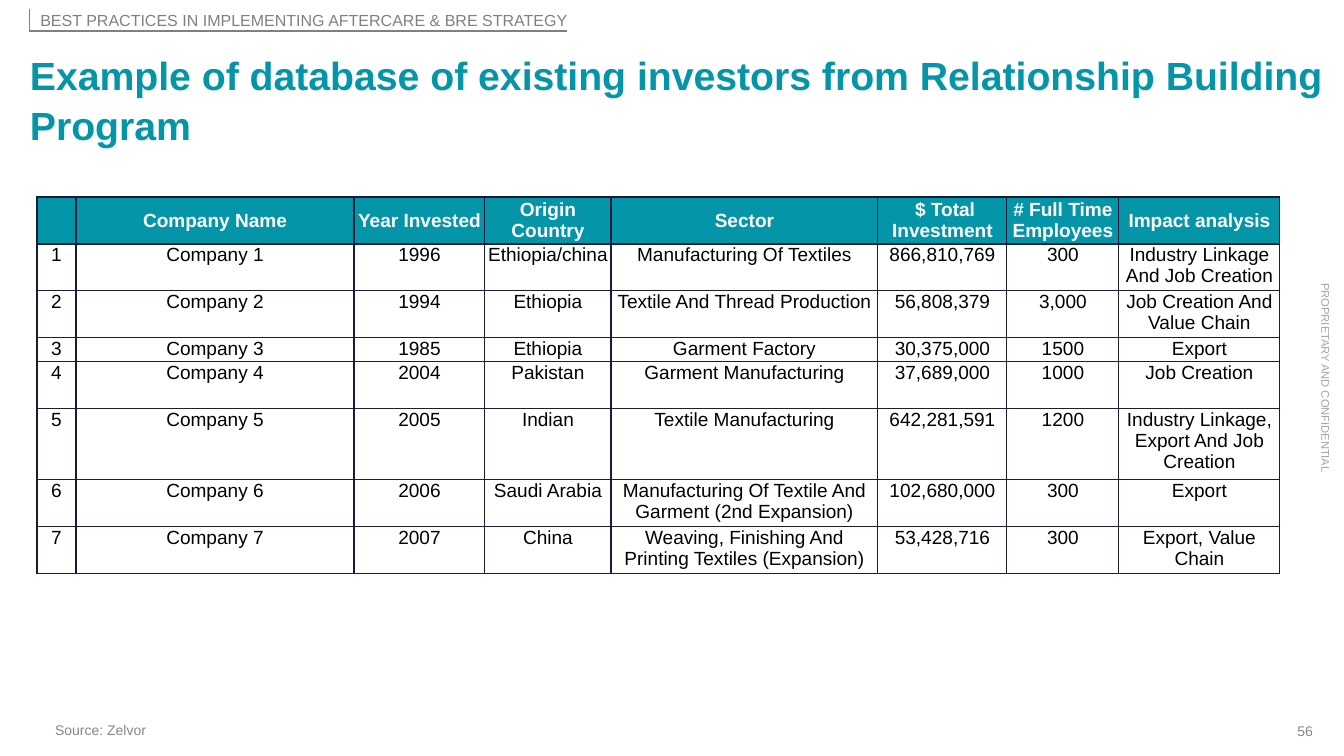
import pptx
import pptx.util
import pptx.dml.color
import pptx.enum.shapes
import pptx.enum.text
import pptx.oxml.ns
from lxml import etree

# Content
TAG = "BEST PRACTICES IN IMPLEMENTING AFTERCARE & BRE STRATEGY"
TITLE = "Example of database of existing investors from Relationship Building Program"
SOURCE = "Source: Zelvor"
NOTICE = "PROPRIETARY AND CONFIDENTIAL"
PAGE = "56"
HEADER = ("", "Company Name", "Year Invested", "Origin Country", "Sector",
          " $ Total Investment", "# Full Time Employees", "Impact analysis")
INVESTORS = [
    ("1", "Company 1", "1996", "Ethiopia/china", "Manufacturing Of Textiles",
     "866,810,769", "300", "Industry Linkage And Job Creation"),
    ("2", "Company 2", "1994", "Ethiopia", "Textile And Thread Production",
     "56,808,379", "3,000", "Job Creation And Value Chain"),
    ("3", "Company 3", "1985", "Ethiopia", "Garment Factory",
     "30,375,000", "1500", "Export"),
    ("4", "Company 4", "2004", "Pakistan", "Garment Manufacturing",
     "37,689,000", "1000", "Job Creation"),
    ("5", "Company 5", "2005", "Indian", "Textile Manufacturing",
     "642,281,591", "1200", "Industry Linkage, Export And Job Creation"),
    ("6", "Company 6", "2006", "Saudi Arabia",
     "Manufacturing Of Textile And Garment (2nd Expansion)",
     "102,680,000", "300", "Export"),
    ("7", "Company 7", "2007", "China",
     "Weaving, Finishing And Printing Textiles (Expansion)",
     "53,428,716", "300", "Export, Value Chain"),
]

# Layout in px
SLIDE_W, SLIDE_H = 1344, 756
TABLE_X, TABLE_Y = 37, 197
COLS = (39, 278, 131, 126, 267, 129, 112, 161)
ROWS = (47, 47, 47, 24, 47, 71, 47, 47)
TAG_X, TAG_Y, TAG_W, TAG_H = 29, 9, 538, 22

# Style
FONT = "Arial"
TEAL = pptx.dml.color.RGBColor(0x04, 0x95, 0xA8)
NAVY = pptx.dml.color.RGBColor(0x18, 0x1C, 0x36)
GREY = pptx.dml.color.RGBColor(0x80, 0x80, 0x80)
FOOT_GREY = pptx.dml.color.RGBColor(0x87, 0x87, 0x87)
PALE_GREY = pptx.dml.color.RGBColor(0xA5, 0xA5, 0xA5)
WHITE = pptx.dml.color.RGBColor(0xFF, 0xFF, 0xFF)
BLACK = pptx.dml.color.RGBColor(0, 0, 0)
ALIGN = pptx.enum.text.PP_ALIGN
ANCHOR = pptx.enum.text.MSO_ANCHOR
qn = pptx.oxml.ns.qn


def px(n):
    return pptx.util.Emu(n * 10000)


def write(tf, text, size, color, bold=False, align=ALIGN.LEFT):
    p = tf.paragraphs[0]
    p.alignment = align
    r = p.add_run()
    r.text = text
    r.font.name = FONT
    r.font.size = pptx.util.Pt(size)
    r.font.bold = bold
    r.font.color.rgb = color
    return p


def add_text(s, box, text, size, color, bold=False, align=ALIGN.LEFT,
             anchor=ANCHOR.TOP, rotation=0):
    sp = s.shapes.add_textbox(*map(px, box))
    sp.rotation = rotation
    tf = sp.text_frame
    tf.word_wrap = True
    tf.vertical_anchor = anchor
    tf.margin_left = tf.margin_right = tf.margin_top = tf.margin_bottom = 0
    return write(tf, text, size, color, bold, align)


def add_line(s, ends, width):
    line = s.shapes.add_connector(pptx.enum.shapes.MSO_CONNECTOR.STRAIGHT,
                                  *map(px, ends))
    line.line.color.rgb = GREY
    line.line.width = pptx.util.Pt(width)
    etree.SubElement(line._element.spPr, qn("a:effectLst"))


def add_borders(cell):
    tcPr = cell._tc.get_or_add_tcPr()
    for side in ("a:lnL", "a:lnR", "a:lnT", "a:lnB"):
        ln = etree.SubElement(tcPr, qn(side), w=str(pptx.util.Pt(1)))
        fill = etree.SubElement(ln, qn("a:solidFill"))
        etree.SubElement(fill, qn("a:srgbClr"), val=str(NAVY))


def add_investor_table(s):
    frame = s.shapes.add_table(len(ROWS), len(COLS), px(TABLE_X), px(TABLE_Y),
                               px(sum(COLS)), px(sum(ROWS)))
    table = frame.table
    table.first_row = table.horz_banding = False
    for column, width in zip(table.columns, COLS):
        column.width = px(width)
    for row, height in zip(table.rows, ROWS):
        row.height = px(height)
    for i, values in enumerate([HEADER] + INVESTORS):
        head = i == 0
        for j, value in enumerate(values):
            cell = table.cell(i, j)
            cell.margin_left = cell.margin_right = 0
            cell.margin_top = cell.margin_bottom = 0
            cell.vertical_anchor = ANCHOR.MIDDLE if head else ANCHOR.TOP
            add_borders(cell)
            if head:
                cell.fill.solid()
                cell.fill.fore_color.rgb = TEAL
            else:
                cell.fill.background()
            if value:
                write(cell.text_frame, value, 15, WHITE if head else BLACK,
                      head, ALIGN.CENTER)


def main():
    prs = pptx.Presentation()
    prs.slide_width, prs.slide_height = px(SLIDE_W), px(SLIDE_H)
    s = prs.slides.add_slide(prs.slide_layouts[6])

    # Page number and side notice
    add_text(s, (1286, 723, 27, 17), PAGE, 11, FOOT_GREY, align=ALIGN.RIGHT)
    add_text(s, (1228, 371, 195, 14), NOTICE, 8.8, PALE_GREY,
             align=ALIGN.CENTER, rotation=90)

    # Title
    p = add_text(s, (30, 49, 1298, 95), TITLE, 30.9, TEAL, bold=True)
    p.line_spacing = 1.05

    # Source line with hanging indent
    p = add_text(s, (30, 721, 1084, 17), SOURCE, 11, FOOT_GREY,
                 anchor=ANCHOR.BOTTOM)
    pPr = p._p.get_or_add_pPr()
    pPr.set("marL", str(px(50)))
    pPr.set("indent", str(px(-25)))

    add_investor_table(s)

    # Section tag with its rules
    right, bottom = TAG_X + TAG_W, TAG_Y + TAG_H
    add_text(s, (TAG_X, TAG_Y, TAG_W, TAG_H), TAG, 12.6, GREY,
             align=ALIGN.RIGHT, anchor=ANCHOR.MIDDLE)
    add_line(s, (right, bottom, TAG_X, bottom), 1.5)
    add_line(s, (TAG_X, TAG_Y, TAG_X, bottom), 0.75)

    prs.save("out.pptx")


if __name__ == "__main__":
    main()
